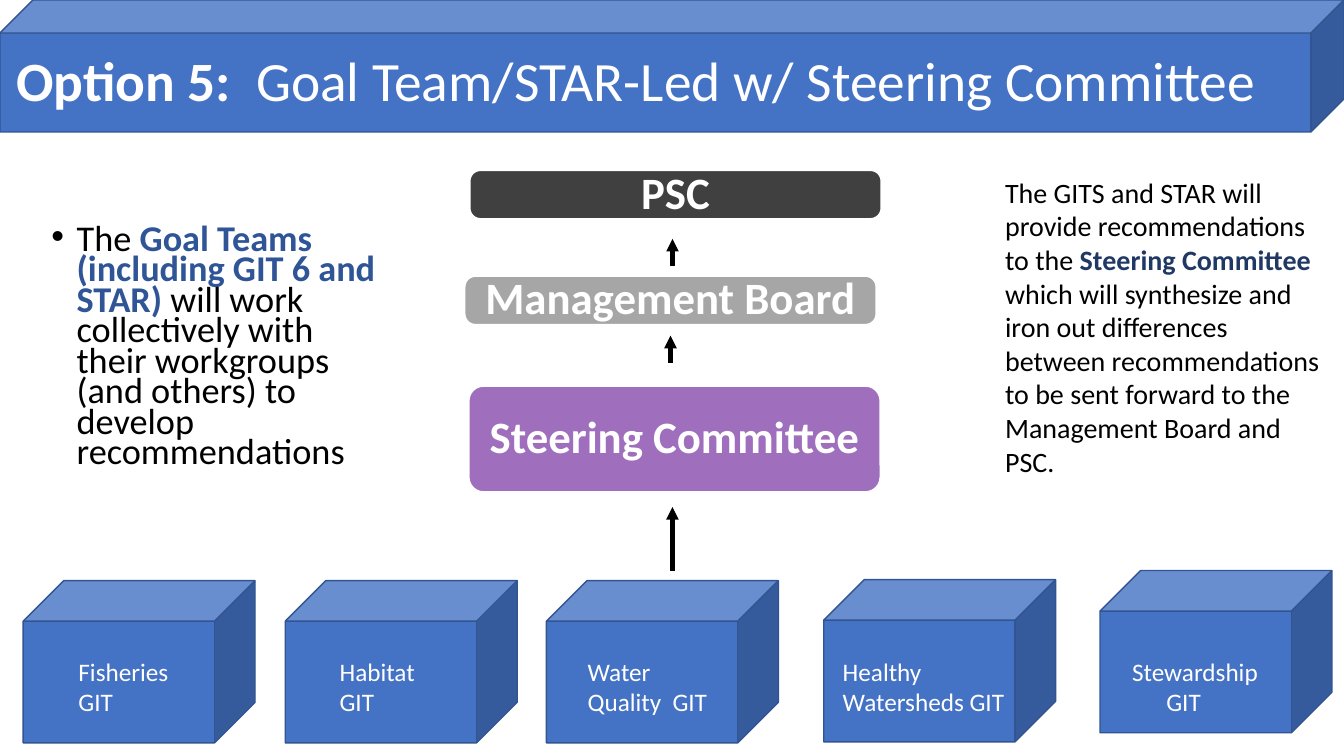
from lxml.etree import SubElement
from pptx import Presentation
from pptx.dml.color import RGBColor
from pptx.enum.shapes import MSO_CONNECTOR as Connector, MSO_SHAPE as Shape
from pptx.enum.text import MSO_ANCHOR as Anchor, MSO_AUTO_SIZE as AutoSize, PP_ALIGN as Align
from pptx.oxml.ns import qn
from pptx.util import Inches, Pt

BLUE, BLUE_EDGE, WHITE, BLACK = "4472C4", "325491", "FFFFFF", "000000"


def color(value):
    return RGBColor.from_string(value)


def place(shape, left, top, width, height):
    shape.left, shape.top = Inches(left), Inches(top)
    shape.width, shape.height = Inches(width), Inches(height)


def write(paragraph, runs, size):
    for text, value, bold in runs:
        run = paragraph.add_run()
        run.text = text
        run.font.name = "Calibri"
        run.font.size = Pt(size)
        run.font.bold = bold
        run.font.color.rgb = color(value)


def add_block(slide, kind, box, fill, edge):
    block = slide.shapes.add_shape(kind, *map(Inches, box))
    block.shadow.inherit = False
    block.fill.solid()
    block.fill.fore_color.rgb = color(fill)
    block.line.color.rgb = color(edge)
    block.line.width = Pt(1)
    return block


def add_cube(slide, *box):
    return add_block(slide, Shape.CUBE, box, BLUE, BLUE_EDGE)


def add_level(slide, label, box, fill, rounding):
    level = add_block(slide, Shape.ROUNDED_RECTANGLE, box, fill, WHITE)
    level.adjustments[0] = rounding
    frame = level.text_frame
    frame.word_wrap = True
    frame.vertical_anchor = Anchor.MIDDLE
    frame.margin_left = frame.margin_right = Inches(0.16)
    frame.margin_top = frame.margin_bottom = Inches(0.16)
    paragraph = frame.paragraphs[0]
    paragraph.alignment = Align.CENTER
    paragraph.line_spacing = 0.9
    write(paragraph, [(label, WHITE, True)], 32)


def add_text(slide, box, runs, size):
    frame = slide.shapes.add_textbox(*map(Inches, box)).text_frame
    frame.word_wrap = True
    write(frame.paragraphs[0], runs, size)
    return frame


def add_up_arrow(slide, x, bottom, top):
    ends = map(Inches, (x, bottom, x, top))
    arrow = slide.shapes.add_connector(Connector.STRAIGHT, *ends)
    arrow.line.color.rgb = color(BLACK)
    arrow.line.width = Pt(3)
    SubElement(arrow.line._get_or_add_ln(), qn("a:tailEnd"), type="triangle")
    SubElement(arrow._element.spPr, qn("a:effectLst"))


def fill_placeholder(placeholder, box, runs, size, spacing):
    place(placeholder, *box)
    frame = placeholder.text_frame
    frame.word_wrap = True
    frame.auto_size = AutoSize.NONE
    frame.vertical_anchor = Anchor.MIDDLE
    paragraph = frame.paragraphs[0]
    paragraph.alignment = Align.LEFT
    paragraph.line_spacing = spacing
    write(paragraph, runs, size)
    return paragraph


def add_header(slide):
    banner = add_cube(slide, 0, 0, 13.33, 1.31)
    slide.shapes._spTree.insert(2, banner._element)
    fill_placeholder(slide.shapes.title, (0.06, 0.34, 13.27, 0.97), [
        ("Option 5:  ", WHITE, True),
        ("Goal Team/STAR-Led w/ Steering Committee", WHITE, False),
    ], 39.6, 0.9)


def add_goal_teams_note(slide):
    paragraph = fill_placeholder(slide.placeholders[1], (0.41, 2.12, 3.46, 2.68), [
        ("The ", BLACK, False),
        ("Goal Teams (including GIT 6 and STAR) ", "2F5597", True),
        ("will work collectively with their workgroups (and others) "
         "to develop recommendations", BLACK, False),
    ], 25.9, 0.7)
    paragraph.space_before = Pt(10)
    properties = paragraph._p.get_or_add_pPr()
    properties.set("marL", str(Inches(0.25)))
    properties.set("indent", str(Inches(-0.25)))
    SubElement(properties, qn("a:buFont"), typeface="Arial")
    SubElement(properties, qn("a:buChar"), char="•")


def add_teams(slide):
    teams = [
        ("Fisheries GIT", 0.23, 5.76, 0.68, 1.2),
        ("Habitat GIT", 2.83, 5.76, 3.27, 1.2),
        ("Water Quality  GIT", 5.42, 5.76, 5.73, 1.4),
        ("Healthy Watersheds GIT", 8.17, 5.75, 8.26, 1.91),
        ("Stewardship", 10.91, 5.66, 11.13, 1.86),
    ]
    for label, cube_left, cube_top, text_left, text_width in teams:
        add_cube(slide, cube_left, cube_top, 2.3, 1.61)
        frame = add_text(slide, (text_left, 6.46, text_width, 0.71),
                         [(label, WHITE, False)], 18)
    stewardship_git = frame.add_paragraph()
    stewardship_git._p.get_or_add_pPr().set("marL", str(Inches(0.34)))
    write(stewardship_git, [("GIT", WHITE, False)], 18)


def main():
    presentation = Presentation()
    presentation.slide_width = Inches(13.33)
    presentation.slide_height = Inches(7.5)
    slide = presentation.slides.add_slide(presentation.slide_layouts[1])

    add_header(slide)
    add_goal_teams_note(slide)
    add_teams(slide)

    add_level(slide, "PSC", (4.66, 1.69, 4.08, 0.48), "404040", 0.22)
    add_level(slide, "Management Board", (4.61, 2.74, 4.08, 0.48), "A6A6A6", 0.22)
    add_level(slide, "Steering Committee", (4.65, 3.83, 4.08, 1.05), "9F6FBD", 0.14)
    for x, bottom, top in [(6.67, 5.66, 5.03), (6.65, 3.6, 3.33), (6.67, 2.64, 2.37)]:
        add_up_arrow(slide, x, bottom, top)

    add_text(slide, (9.87, 1.69, 3.46, 3.13), [
        ("The GITS and STAR will provide recommendations to the ", BLACK, False),
        ("Steering Committee ", "203864", True),
        ("which will synthesize and iron out differences between recommendations "
         "to be sent forward to the Management Board and PSC.", BLACK, False),
    ], 20)
    presentation.save("out.pptx")


if __name__ == "__main__":
    main()
